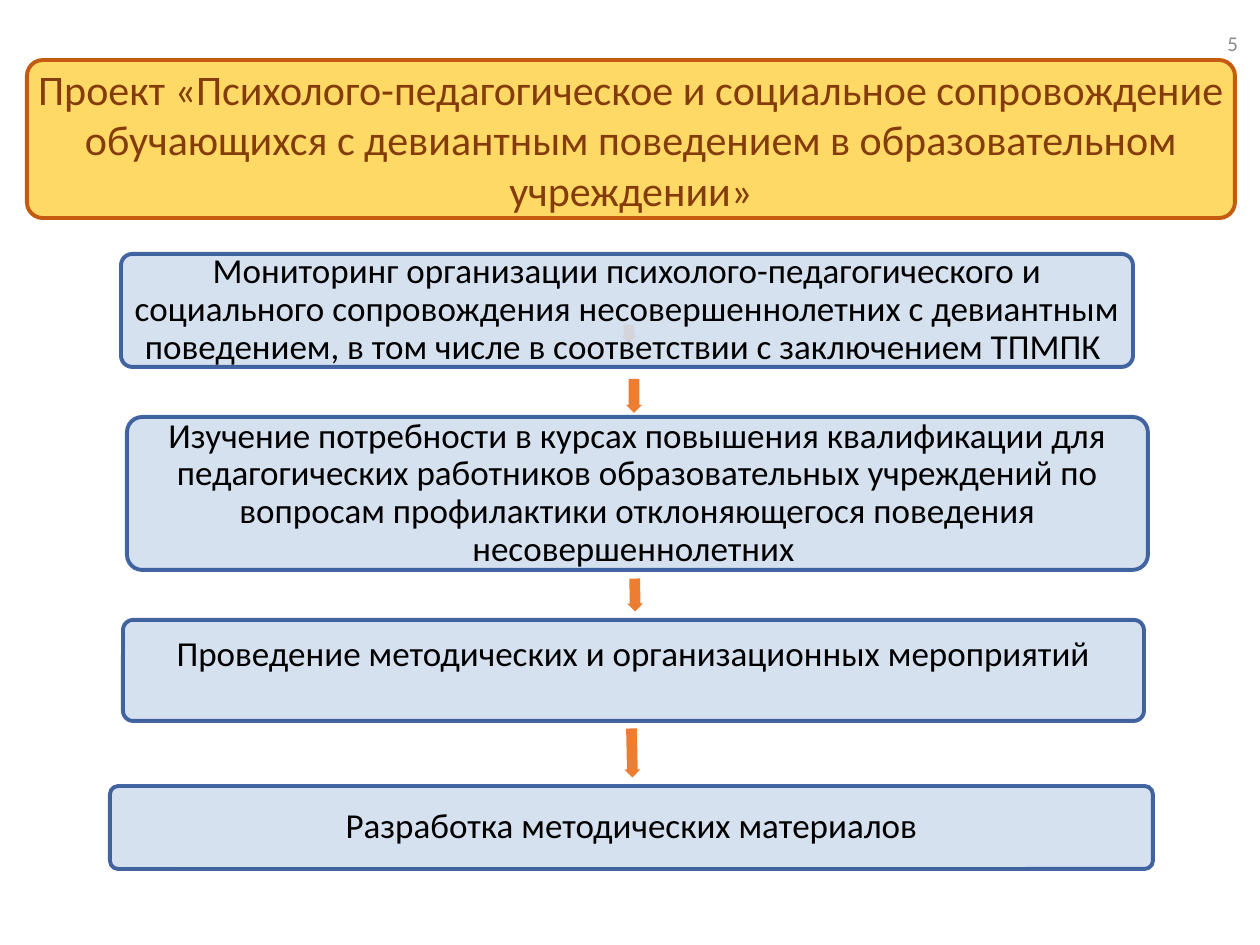
from lxml import etree
from pptx import Presentation
from pptx.dml.color import RGBColor
from pptx.enum.shapes import MSO_SHAPE
from pptx.enum.text import MSO_ANCHOR, PP_ALIGN
from pptx.oxml.ns import qn
from pptx.util import Pt

ROUND, ARROW = MSO_SHAPE.ROUNDED_RECTANGLE, MSO_SHAPE.RIGHT_ARROW
CENTER, RIGHT = PP_ALIGN.CENTER, PP_ALIGN.RIGHT
MIDDLE = MSO_ANCHOR.MIDDLE

GOLD = RGBColor(0xFF, 0xD9, 0x66)
RUST = RGBColor(0xC5, 0x5A, 0x11)
BROWN = RGBColor(0x84, 0x3C, 0x0B)
PALE = RGBColor(0xD2, 0xDE, 0xEF)
NAVY = RGBColor(0x2F, 0x55, 0x97)
ORANGE = RGBColor(0xED, 0x7D, 0x31)
GRAY = RGBColor(0x8C, 0x8C, 0x8C)
BLACK = RGBColor(0, 0, 0)

SCALE = 914400 / 126  # EMU per px
FONT = "Calibri"
PAD = 3

TITLE = ("Проект «Психолого-педагогическое и социальное сопровождение обучающихся "
         "с девиантным поведением в образовательном учреждении»")
# text, (left, top, width, height), bottom inset
STEPS = [
    ("Мониторинг организации психолого-педагогического и социального сопровождения "
     "несовершеннолетних с девиантным поведением, в том числе в соответствии "
     "с заключением ТПМПК ", (121, 254, 1012, 113), PAD),
    ("Изучение потребности в курсах повышения квалификации для педагогических "
     "работников образовательных учреждений по вопросам профилактики отклоняющегося "
     "поведения несовершеннолетних ", (127, 417, 1021, 153), PAD),
    ("Проведение методических и организационных мероприятий",
     (123, 620, 1021, 101), 34),
    ("Разработка методических материалов", (110, 786, 1043, 83), PAD),
]
# centre x, centre y, length, turn in degrees
ARROWS = [(629, 334, 19, 88.8), (634, 396, 34, 90.1),
          (635, 595, 33, 89.2), (632, 753, 49, 88.8)]
THICK = 16


def px(*vals):
    return [round(v * SCALE) for v in vals]


def fade(color, pct):
    """Make a solid fill of a shape or line partly transparent."""
    node = color._xFill.find(qn("a:solidFill"))[0]
    etree.SubElement(node, qn("a:alpha"), val=str(pct * 1000))


def write(shape, text, size=20, color=BLACK, align=CENTER, gap=0.9, pad=PAD, low=PAD):
    frame = shape.text_frame
    frame.word_wrap = True
    frame.vertical_anchor = MIDDLE
    frame.margin_left, frame.margin_top, frame.margin_right, frame.margin_bottom = px(
        pad, PAD, pad, low)
    para = frame.paragraphs[0]
    para.alignment, para.line_spacing = align, gap
    run = para.add_run()
    run.text = text
    run.font.name, run.font.size = FONT, Pt(size)
    run.font.color.rgb = color


def draw(slide, kind, box, fill, line=None, alpha=None):
    shape = slide.shapes.add_shape(kind, *px(*box))
    shape.shadow.inherit = False
    shape.fill.solid()
    shape.fill.fore_color.rgb = fill
    if line is None:
        shape.line.fill.background()
    else:
        shape.line.color.rgb = line
        shape.line.width = Pt(2.25)
    if alpha:
        for color in (shape.fill.fore_color, shape.line.color):
            fade(color, alpha)
    return shape


def build():
    deck = Presentation()
    deck.slide_width, deck.slide_height = px(1260, 945)
    slide = deck.slides.add_slide(deck.slide_layouts[6])

    number = slide.shapes.add_textbox(*px(1177, 10, 74, 66))
    write(number, "5", size=12, color=GRAY, align=RIGHT, gap=1, pad=13)

    title = draw(slide, ROUND, (27, 60, 1208, 158), GOLD, RUST)
    title.adjustments[0] = 0.1
    write(title, TITLE, size=24, color=BROWN, gap=1)

    for (text, box, low), (mid, high, span, turn) in zip(STEPS, ARROWS):
        arrow = draw(slide, ARROW, (mid - span / 2, high - THICK / 2, span, THICK), ORANGE)
        arrow.adjustments[0] = 0.67
        arrow.rotation = turn
        step = draw(slide, ROUND, box, PALE, NAVY, alpha=90)
        step.adjustments[0] = 0.1
        write(step, text, low=low)

    deck.save("out.pptx")


def fade(color, pct):
    """Make a theme-free colour partly transparent."""
    node = color._color._xClr
    etree.SubElement(node, qn("a:alpha"), val=str(pct * 1000))


if __name__ == "__main__":
    build()
